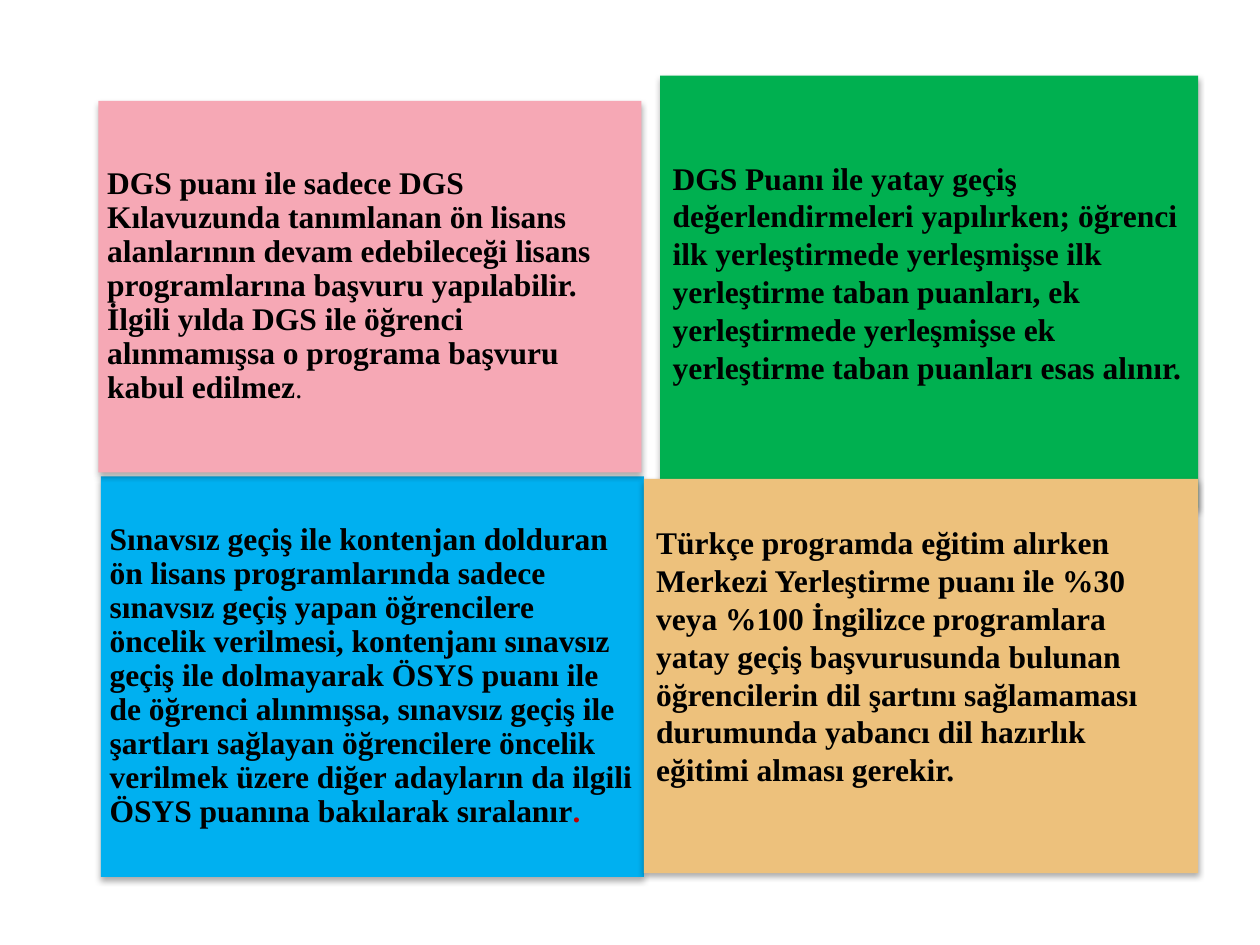
"""Build a slide of four coloured cards about transfer rules."""
from dataclasses import dataclass

from lxml.etree import SubElement
from pptx import Presentation
from pptx.dml.color import RGBColor
from pptx.enum.shapes import MSO_SHAPE
from pptx.enum.text import MSO_ANCHOR, PP_ALIGN
from pptx.oxml.ns import qn
from pptx.shapes.autoshape import Shape
from pptx.slide import Slide
from pptx.util import Inches, Pt

COLUMNS, ROWS = 100, 75
SLIDE_WIDTH, SLIDE_HEIGHT = Inches(10), Inches(7.5)
BLACK = RGBColor(0x00, 0x00, 0x00)
RED = RGBColor(0xC0, 0x00, 0x00)
BLUE = RGBColor(0x00, 0xB0, 0xF0)
PINK = RGBColor(0xF6, 0xA8, 0xB5)
GREEN = RGBColor(0x00, 0xB0, 0x50)
SAND = RGBColor(0xED, 0xC1, 0x7C)


@dataclass(frozen=True)
class Rule:
    """One card: its place in grid columns and rows, colour, text and layout."""

    column: float
    row: float
    columns: float
    rows: float
    color: RGBColor
    statement: str
    ending: str = ""
    ending_size: int = 18
    ending_bold: bool = True
    ending_color: RGBColor = BLACK
    anchor: MSO_ANCHOR = MSO_ANCHOR.MIDDLE
    side_inset: float = 0.7
    top_inset: float = 0.7
    bottom_inset: float = 0.7
    line_spacing: float = 0.9


RULES = (
    Rule(8, 37.8, 43.1, 31.8, BLUE,
         "Sınavsız geçiş ile kontenjan dolduran ön lisans programlarında sadece sınavsız geçiş "
         "yapan öğrencilere öncelik verilmesi, kontenjanı sınavsız geçiş ile dolmayarak ÖSYS "
         "puanı ile de öğrenci alınmışsa, sınavsız geçiş ile şartları sağlayan öğrencilere "
         "öncelik verilmek üzere diğer adayların da ilgili ÖSYS puanına bakılarak sıralanır",
         ending=".", ending_color=RED),
    Rule(7.8, 8, 43.1, 29.5, PINK,
         "DGS puanı ile sadece DGS Kılavuzunda tanımlanan ön lisans alanlarının devam "
         "edebileceği lisans programlarına başvuru yapılabilir. İlgili yılda DGS ile öğrenci "
         "alınmamışsa o programa başvuru kabul edilmez",
         ending=".", ending_size=16, ending_bold=False),
    Rule(52.4, 6, 42.7, 34.3, GREEN,
         "DGS Puanı ile yatay geçiş değerlendirmeleri yapılırken; öğrenci ilk yerleştirmede "
         "yerleşmişse ilk yerleştirme taban puanları, ek yerleştirmede yerleşmişse ek "
         "yerleştirme taban puanları esas alınır.",
         side_inset=1, top_inset=6.6, bottom_inset=9.7, line_spacing=1.0),
    Rule(51.1, 38, 44, 31.3, SAND,
         "Türkçe programda eğitim alırken Merkezi Yerleştirme puanı ile %30 veya %100 "
         "İngilizce programlara yatay geçiş başvurusunda bulunan öğrencilerin dil şartını "
         "sağlamaması durumunda yabancı dil hazırlık eğitimi alması gerekir.",
         anchor=MSO_ANCHOR.TOP, side_inset=1, top_inset=3.55, line_spacing=1.0),
)


def across(columns: float) -> int:
    """Turn grid columns into a length."""
    return round(SLIDE_WIDTH * columns / COLUMNS)


def down(rows: float) -> int:
    """Turn grid rows into a length."""
    return round(SLIDE_HEIGHT * rows / ROWS)


def apply_format(target: object, values: dict[str, object]) -> None:
    """Set each named attribute on the target."""
    for name, value in values.items():
        setattr(target, name, value)


def cast_shadow(card: Shape) -> None:
    """Give the card a soft shadow straight below it."""
    card.shadow.inherit = False
    effects = card._element.spPr.find(qn("a:effectLst"))
    shadow = SubElement(effects, qn("a:outerShdw"), blurRad=str(Pt(3.5)), dist=str(Pt(2.2)),
                        dir="5400000", rotWithShape="0")
    shade = SubElement(shadow, qn("a:srgbClr"), val=str(BLACK))
    SubElement(shade, qn("a:alpha"), val="32000")


def draw_rule(slide: Slide, rule: Rule) -> None:
    """Draw one card with its statement and ending."""
    card = slide.shapes.add_shape(MSO_SHAPE.RECTANGLE, across(rule.column), down(rule.row),
                                  across(rule.columns), down(rule.rows))
    card.fill.solid()
    card.fill.fore_color.rgb = rule.color
    card.line.fill.background()
    cast_shadow(card)
    apply_format(card.text_frame, {
        "word_wrap": True,
        "vertical_anchor": rule.anchor,
        "margin_left": across(rule.side_inset),
        "margin_right": across(rule.side_inset),
        "margin_top": down(rule.top_inset),
        "margin_bottom": down(rule.bottom_inset),
    })
    paragraph = card.text_frame.paragraphs[0]
    apply_format(paragraph, {"alignment": PP_ALIGN.LEFT, "line_spacing": rule.line_spacing})
    pieces = ((rule.statement, 18, True, BLACK),
              (rule.ending, rule.ending_size, rule.ending_bold, rule.ending_color))
    for words, size, bold, color in pieces:
        if words:
            run = paragraph.add_run()
            run.text = words
            apply_format(run.font, {"name": "Times New Roman", "size": Pt(size), "bold": bold})
            run.font.color.rgb = color


def main() -> None:
    """Build and save the slide."""
    presentation = Presentation()
    apply_format(presentation, {"slide_width": SLIDE_WIDTH, "slide_height": SLIDE_HEIGHT})
    slide = presentation.slides.add_slide(presentation.slide_layouts[6])
    for rule in RULES:
        draw_rule(slide, rule)
    presentation.save("out.pptx")


if __name__ == "__main__":
    main()
